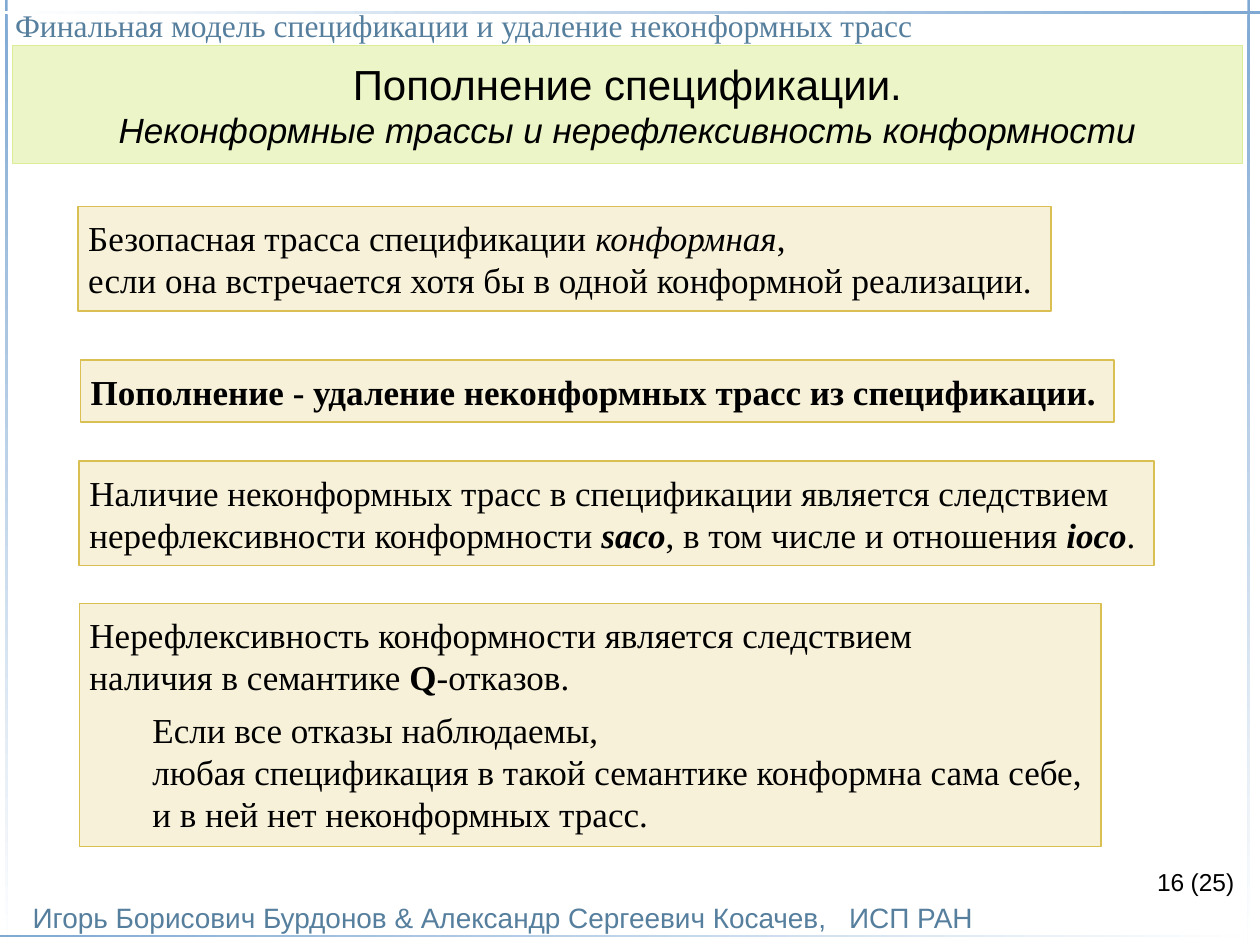
from pptx import Presentation
from pptx.dml.color import RGBColor as RGB
from pptx.enum.shapes import MSO_SHAPE as Shape
from pptx.enum.text import MSO_ANCHOR as Anchor, MSO_AUTO_SIZE as Fit, PP_ALIGN as Align
from pptx.oxml.ns import qn
from pptx.util import Inches, Pt
from lxml import etree

COLORS = {
    "rule": "7FA9D3", "white": "FFFFFF", "muted": "567F9E", "black": "000000",
    "green": "EBF5C7", "lime": "DBED97", "cream": "F7F1D9", "gold": "DAC052",
}
SANS, SERIF = "Arial", "Times New Roman"


def tint(name):
    return RGB.from_string(COLORS[name])


def write(shape, paras, size, face, color="black", pad=(0, 0), align=Align.LEFT):
    frame = shape.text_frame
    frame.auto_size = Fit.NONE
    frame.word_wrap = True
    frame.margin_left = frame.margin_right = Inches(pad[0])
    frame.margin_top = frame.margin_bottom = Inches(pad[1])
    for n, parts in enumerate(paras):
        para = frame.paragraphs[0] if n == 0 else frame.add_paragraph()
        para.alignment = align
        for text, style in parts:
            run = para.add_run()
            run.text = text
            run.font.name = face
            run.font.size = Pt(size)
            run.font.color.rgb = tint(color)
            run.font.bold = "b" in style
            run.font.italic = "i" in style
    return frame


deck = Presentation()
deck.slide_width, deck.slide_height = Inches(10), Inches(7.5)
slide = deck.slides.add_slide(deck.slide_layouts[5])
shapes = slide.shapes

rules = [
    (0.04, 0, 0.02, 7.5, 270),
    (0, 0.09, 10, 0.02, 180),
    (0, 7.42, 10, 0.02, 0),
    (9.9, 0, 0.02, 7.5, 270),
]
for *box, angle in rules:
    rule = shapes.add_shape(Shape.RECTANGLE, *map(Inches, box))
    rule.shadow.inherit = False
    rule.line.fill.background()
    rule.fill.gradient()
    rule.fill.gradient_angle = angle
    for stop, name in zip(rule.fill.gradient_stops, ("rule", "white")):
        stop.color.rgb = tint(name)

labels = [
    (0.26, 7.14, 8, 0.27, "Игорь Борисович Бурдонов & Александр Сергеевич Косачев,\tИСП РАН",
     16, SANS, "muted", Align.LEFT),
    (0.12, 0.05, 9.73, 0.3, "Финальная модель спецификации и удаление неконформных трасс",
     18, SERIF, "muted", Align.LEFT),
    (9.45, 6.88, 0.4, 0.24, "(25)", 14, SANS, "black", Align.LEFT),
    (8.4, 6.88, 1, 0.24, "16", 14, SANS, "black", Align.RIGHT),
]
for *box, text, size, face, color, align in labels:
    label = shapes.add_textbox(*map(Inches, box))
    if "\t" in text:
        props = label.text_frame.paragraphs[0]._p.get_or_add_pPr()
        tabs = etree.SubElement(props, qn("a:tabLst"))
        etree.SubElement(tabs, qn("a:tab"), pos=str(Inches(6.48)), algn="l")
    frame = write(label, [[(text, "")]], size, face, color, align=align)
    if size == 16:
        frame.vertical_anchor = Anchor.BOTTOM

title = shapes.title
title.left, title.top, title.width, title.height = map(Inches, (0.1, 0.36, 9.76, 0.94))
title.fill.solid()
title.fill.fore_color.rgb = tint("green")
title.line.color.rgb = tint("lime")
title.line.width = Pt(0.75)
frame = write(title, [
    [("Пополнение спецификации.", "")],
    [("Неконформные трассы и нерефлексивность конформности", "i")],
], 20, SANS, pad=(0, 0.1), align=Align.CENTER)
frame.vertical_anchor = Anchor.MIDDLE
frame.paragraphs[0].runs[0].font.size = Pt(24)

notes = [
    (0.62, 1.64, 7.72, 0.83, [
        [("Безопасная трасса спецификации ", ""), ("конформная", "i"), (",", "")],
        [("если она встречается хотя бы в одной конформной реализации.", "")],
    ]),
    (0.64, 2.86, 8.2, 0.49, [
        [("Пополнение - удаление неконформных трасс из спецификации.", "b")],
    ]),
    (0.63, 3.66, 8.53, 0.83, [
        [("Наличие неконформных трасс в спецификации является следствием", "")],
        [("нерефлексивности конформности ", ""), ("saco", "bi"),
         (", в том числе и отношения ", ""), ("ioco", "bi"), (".", "")],
    ]),
    (0.63, 4.79, 8.11, 1.93, [
        [("Нерефлексивность конформности является следствием", "")],
        [("наличия в семантике ", ""), ("Q", "b"), ("-отказов.", "")],
        [("Если все отказы наблюдаемы,", "")],
        [("любая спецификация в такой семантике конформна сама себе,", "")],
        [("и в ней нет неконформных трасс.", "")],
    ]),
]
for *box, paras in notes:
    note = shapes.add_shape(Shape.RECTANGLE, *map(Inches, box))
    note.shadow.inherit = False
    note.fill.solid()
    note.fill.fore_color.rgb = tint("cream")
    note.line.color.rgb = tint("gold")
    note.line.width = Pt(1)
    frame = write(note, paras, 20, SERIF, pad=(0.08, 0.08))
    frame.vertical_anchor = Anchor.TOP

inner = frame.paragraphs[2:]
inner[0].space_before = Pt(6)
for para in inner:
    para.level = 1
    para._p.get_or_add_pPr().set("marL", str(Inches(0.5)))

deck.save("out.pptx")
